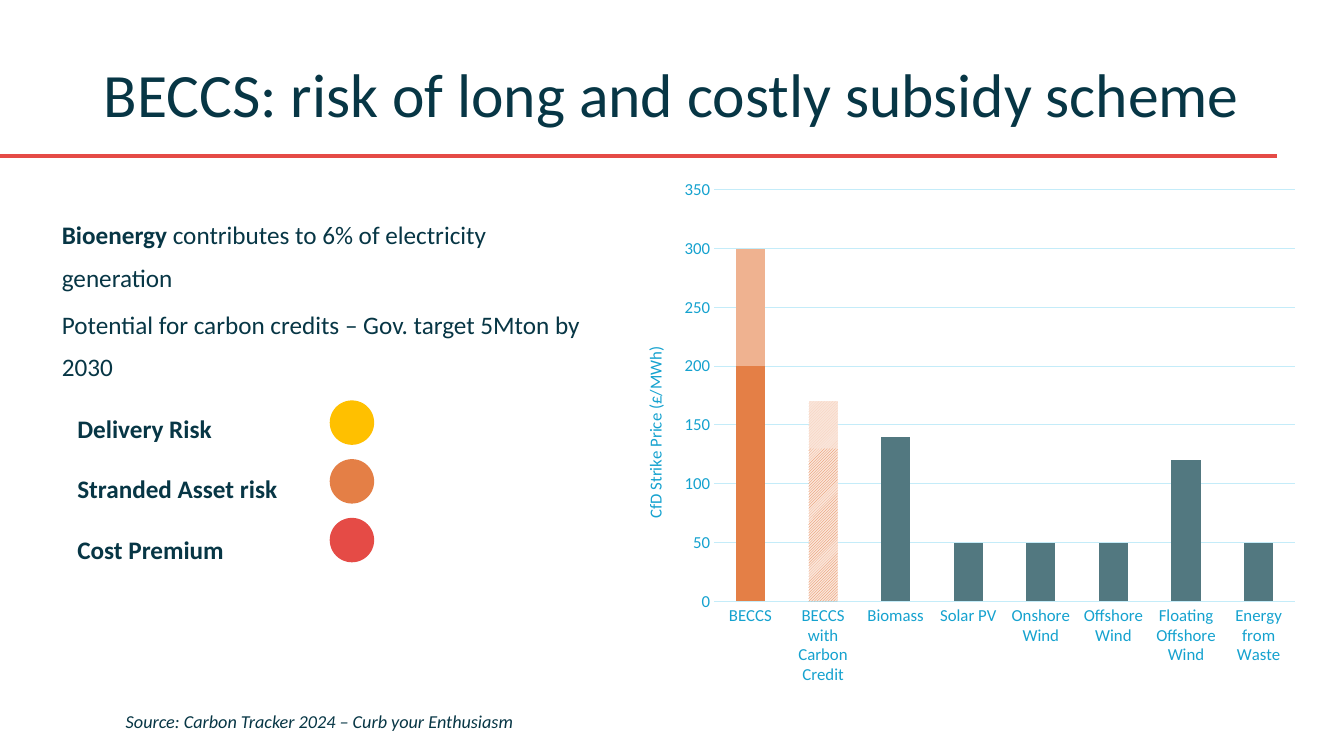
from typing import NamedTuple

from lxml import etree
from pptx import Presentation
from pptx.chart.data import CategoryChartData
from pptx.dml.color import RGBColor
from pptx.enum.chart import XL_CHART_TYPE, XL_TICK_MARK
from pptx.enum.dml import MSO_PATTERN
from pptx.enum.shapes import MSO_CONNECTOR, MSO_SHAPE
from pptx.enum.text import MSO_ANCHOR, PP_ALIGN
from pptx.oxml.ns import qn
from pptx.util import Cm, Pt

STACKED = XL_CHART_TYPE.COLUMN_STACKED
NO_TICK = XL_TICK_MARK.NONE
HATCH = MSO_PATTERN.DARK_UPWARD_DIAGONAL
STRAIGHT = MSO_CONNECTOR.STRAIGHT
OVAL = MSO_SHAPE.OVAL
MIDDLE, TOP = MSO_ANCHOR.MIDDLE, MSO_ANCHOR.TOP
CENTER, LEFT = PP_ALIGN.CENTER, PP_ALIGN.LEFT

FONT = "Calibri"
COLORS = {
    "ink": "073645", "red": "E54B46", "orange": "E47F46", "amber": "FFC000",
    "slate": "527880", "peach": "EFB290", "pale_peach": "F4CCB5",
    "cream": "FAE5DA", "axis": "15A2CF", "grid": "C4ECF9",
}


class Box(NamedTuple):
    """Position and size in centimetres."""
    left: float
    top: float
    width: float
    height: float


class Words(NamedTuple):
    text: str
    bold: bool = False
    italic: bool = False


class TextBlock(NamedTuple):
    box: Box
    paragraphs: list[list[Words]]
    size: float
    spacing: float = 1.0
    gap: float = 0
    align: PP_ALIGN = LEFT
    anchor: MSO_ANCHOR = TOP


class Risk(NamedTuple):
    label: str
    color: str


class PriceSeries(NamedTuple):
    name: str
    values: list[int | None]
    color: str
    credit_hatch: str | None = None


RISKS = [
    Risk("Delivery Risk", "amber"),
    Risk("Stranded Asset risk", "orange"),
    Risk("Cost Premium", "red"),
]
RISK_DOT = Box(8.31, 10.09, 1.12, 1.12)
RISK_STEP = 1.48

TEXTS = [
    TextBlock(Box(1.7, 0.76, 30.48, 3.18),
              [[Words("BECCS: risk of long and costly subsidy scheme")]],
              44, align=CENTER, anchor=MIDDLE),
    TextBlock(Box(1.31, 5.11, 14.02, 3.7),
              [[Words("Bioenergy", bold=True),
                Words(" contributes to 6% of electricity generation")],
               [Words("Potential for carbon credits – Gov. target 5Mton by 2030")]],
              18, spacing=1.4, gap=3.6),
    TextBlock(Box(2.92, 17.83, 21.87, 0.66),
              [[Words("Source: Carbon Tracker 2024 – Curb your Enthusiasm", italic=True)]],
              13, spacing=0.9),
    TextBlock(Box(1.7, 9.52, 7.26, 4.65),
              [[Words(risk.label, bold=True)] for risk in RISKS],
              18, spacing=2.0),
]

CHART_BOX = Box(15.76, 4.25, 17.22, 13.3)
PLOT_LAYOUT = {"x": 0.13, "y": 0.04, "w": 0.85, "h": 0.78}
TECHNOLOGIES = [
    "BECCS", "BECCS with Carbon Credit", "Biomass", "Solar PV", "Onshore Wind",
    "Offshore Wind", "Floating Offshore Wind", "Energy from Waste",
]
CREDIT_INDEX = TECHNOLOGIES.index("BECCS with Carbon Credit")
PRICES = [
    PriceSeries("Series 1", [None, 0, 140, 50, 50, 50, 120, 50], "slate"),
    PriceSeries("Series 2", [200, 130] + [0] * 6, "orange", "orange"),
    PriceSeries("Series 3", [100, 40] + [0] * 6, "peach", "pale_peach"),
]


def rgb(name: str) -> RGBColor:
    return RGBColor.from_string(COLORS[name])


def lengths(box: Box) -> list[Cm]:
    return [Cm(value) for value in box]


def style_font(font, size: float, color: str) -> None:
    font.name = FONT
    font.size = Pt(size)
    font.color.rgb = rgb(color)


def style_line(line, color: str, width: float) -> None:
    line.color.rgb = rgb(color)
    line.width = Pt(width)


def add_text(slide, block: TextBlock) -> None:
    frame = slide.shapes.add_textbox(*lengths(block.box)).text_frame
    frame.word_wrap = True
    frame.vertical_anchor = block.anchor
    for index, words in enumerate(block.paragraphs):
        paragraph = frame.add_paragraph() if index else frame.paragraphs[0]
        paragraph.alignment = block.align
        paragraph.line_spacing = block.spacing
        if index:
            paragraph.space_before = Pt(block.gap)
        for part in words:
            run = paragraph.add_run()
            run.text = part.text
            style_font(run.font, block.size, "ink")
            run.font.bold = part.bold
            run.font.italic = part.italic


def add_title_rule(slide) -> None:
    rule = slide.shapes.add_connector(STRAIGHT, Cm(0), Cm(3.94), Cm(32.18), Cm(3.94))
    style_line(rule.line, "red", 3)
    etree.SubElement(rule._element.spPr, qn("a:effectLst"))


def add_risk_dots(slide) -> None:
    for index, risk in enumerate(RISKS):
        box = RISK_DOT._replace(top=RISK_DOT.top + index * RISK_STEP)
        dot = slide.shapes.add_shape(OVAL, *lengths(box))
        dot.shadow.inherit = False
        dot.fill.solid()
        dot.fill.fore_color.rgb = rgb(risk.color)
        dot.line.fill.background()


def fix_plot_area(chart) -> None:
    """Pin the inner plot area to fixed fractions of the chart."""
    plot_area = chart._chartSpace.chart.plotArea
    for old in plot_area.findall(qn("c:layout")):
        plot_area.remove(old)
    layout = etree.Element(qn("c:layout"))
    plot_area.insert(0, layout)
    manual = etree.SubElement(layout, qn("c:manualLayout"))
    settings = {"layoutTarget": "inner", "xMode": "edge", "yMode": "edge", **PLOT_LAYOUT}
    for tag, value in settings.items():
        etree.SubElement(manual, qn(f"c:{tag}")).set("val", str(value))


def style_axes(chart) -> None:
    technology_axis, price_axis = chart.category_axis, chart.value_axis
    for axis in (technology_axis, price_axis):
        axis.major_tick_mark = NO_TICK
        axis.minor_tick_mark = NO_TICK
        style_font(axis.tick_labels.font, 12, "axis")
    style_line(technology_axis.format.line, "grid", 0.75)
    price_axis.format.line.fill.background()
    style_line(price_axis.major_gridlines.format.line, "grid", 0.75)
    price_axis.minimum_scale, price_axis.maximum_scale = 0, 350
    price_axis.major_unit = 50

    frame = price_axis.axis_title.text_frame
    run = frame.paragraphs[0].add_run()
    run.text = "CfD Strike Price (£/MWh)"
    style_font(run.font, 12, "axis")
    run.font.bold = False
    body = frame._txBody.find(qn("a:bodyPr"))
    body.set("rot", "-5400000")
    body.set("vert", "horz")


def add_price_chart(slide) -> None:
    data = CategoryChartData()
    data.categories = TECHNOLOGIES
    for price in PRICES:
        data.add_series(price.name, price.values)
    chart = slide.shapes.add_chart(STACKED, *lengths(CHART_BOX), data).chart
    chart.has_title = False
    chart.has_legend = False
    style_font(chart.font, 12, "ink")
    plot = chart.plots[0]
    plot.gap_width, plot.overlap = 150, 100
    plot.vary_by_categories = False
    for series, price in zip(plot.series, PRICES):
        series.format.fill.solid()
        series.format.fill.fore_color.rgb = rgb(price.color)
        if price.credit_hatch:
            fill = series.points[CREDIT_INDEX].format.fill
            fill.patterned()
            fill.pattern = HATCH
            fill.fore_color.rgb = rgb(price.credit_hatch)
            fill.back_color.rgb = rgb("cream")
    style_axes(chart)
    fix_plot_area(chart)


def main() -> None:
    deck = Presentation()
    deck.slide_width, deck.slide_height = Cm(33.87), Cm(19.05)
    slide = deck.slides.add_slide(deck.slide_layouts[6])
    add_title_rule(slide)
    for block in TEXTS:
        add_text(slide, block)
    add_price_chart(slide)
    add_risk_dots(slide)
    deck.save("out.pptx")


if __name__ == "__main__":
    main()
